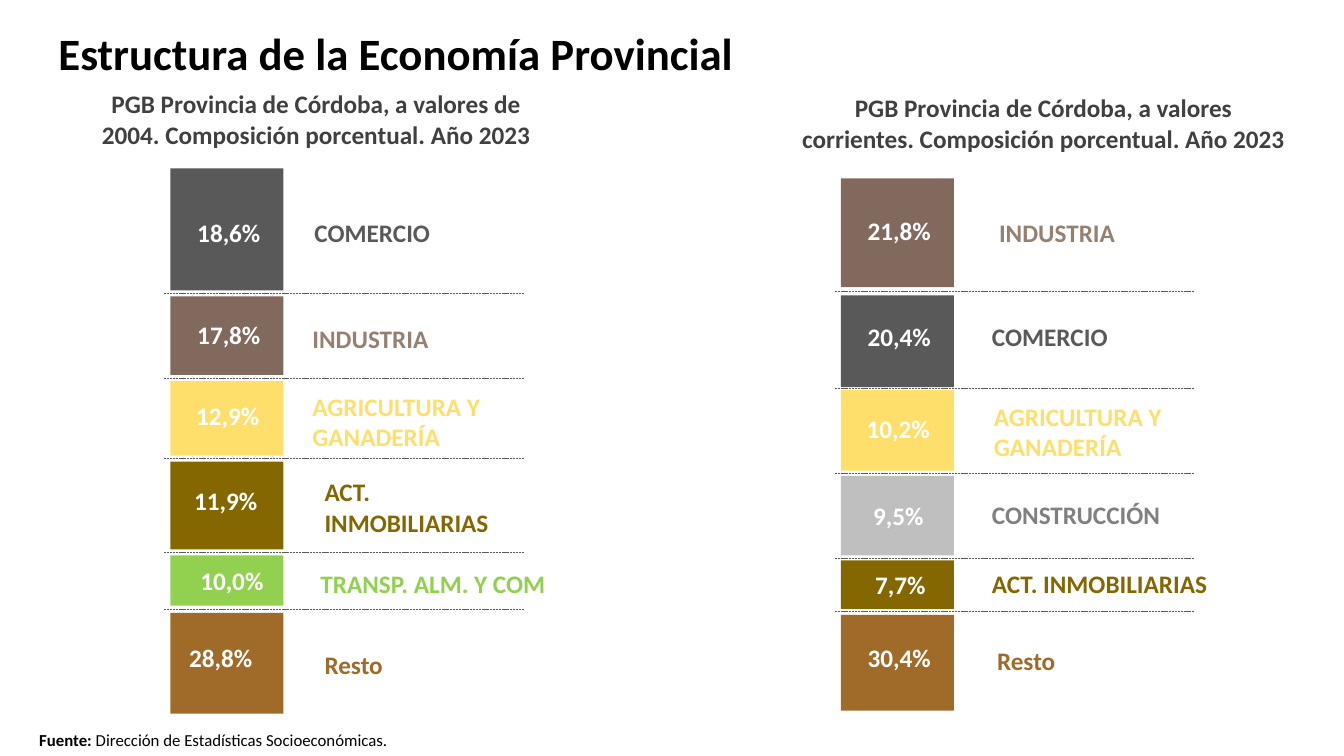
from lxml.etree import SubElement
from pptx import Presentation
from pptx.dml.color import RGBColor
from pptx.enum.dml import MSO_LINE
from pptx.enum.shapes import MSO_CONNECTOR, MSO_SHAPE
from pptx.enum.text import MSO_ANCHOR, MSO_AUTO_SIZE, PP_ALIGN
from pptx.oxml.ns import qn
from pptx.util import Inches, Pt

TITLE = "Estructura de la Economía Provincial"
SOURCE = ("Fuente: ", "Dirección de Estadísticas Socioeconómicas.")

GREY, BROWN, YELLOW, OLIVE = "595959", "82695E", "FFDF6B", "846700"
GREEN, SILVER, OCHRE = "92D050", "BFBFBF", "A06A29"
LABEL_COLORS = {BROWN: "968071", SILVER: "808080"}  # other labels match their bar

# sector: share, label, colour, bar (top, height),
#         share text (centre x, top), label box (left, top, width)
STACKS = [
    {
        "heading": "PGB Provincia de Córdoba, a valores de 2004. "
                   "Composición porcentual. Año 2023",
        "heading_box": (0.76, 0.83, 4.75, 0.71),
        "bar_left": 1.69,
        "sectors": [
            ("18,6%", "COMERCIO", GREY, (1.67, 1.21), (2.27, 2.11), (3.02, 2.11, 2.18)),
            ("17,8%", "INDUSTRIA", BROWN, (2.94, 0.78), (2.27, 3.12), (3, 3.16, 2.18)),
            ("12,9%", "AGRICULTURA Y GANADERÍA", YELLOW, (3.78, 0.74), (2.26, 3.92), (3, 3.83, 2.18)),
            ("11,9%", "ACT. INMOBILIARIAS", OLIVE, (4.58, 0.87), (2.24, 4.77), (3.12, 4.68, 2.18)),
            ("10,0%", "TRANSP. ALM. Y COM", GREEN, (5.51, 0.5), (2.3, 5.56), (3.08, 5.59, 2.82)),
            ("28,8%", "Resto", OCHRE, (6.08, 1), (2.19, 6.32), (3.12, 6.39, 2.18)),
        ],
    },
    {
        "heading": "PGB Provincia de Córdoba, a valores corrientes. "
                   "Composición porcentual. Año 2023",
        "heading_box": (7.85, 0.87, 5, 0.71),
        "bar_left": 8.34,
        "sectors": [
            ("21,8%", "INDUSTRIA", BROWN, (1.77, 1.08), (8.92, 2.09), (9.81, 2.11, 2.18)),
            ("20,4%", "COMERCIO", GREY, (2.93, 0.91), (8.92, 3.14), (9.74, 3.14, 2.18)),
            ("10,2%", "AGRICULTURA Y GANADERÍA", YELLOW, (3.87, 0.8), (8.91, 4.05), (9.76, 3.93, 2.18)),
            ("9,5%", "CONSTRUCCIÓN", SILVER, (4.72, 0.79), (8.91, 4.91), (9.74, 4.9, 2.18)),
            ("7,7%", "ACT. INMOBILIARIAS", OLIVE, (5.56, 0.48), (8.93, 5.6), (9.74, 5.59, 2.78)),
            ("30,4%", "Resto", OCHRE, (6.1, 0.95), (8.92, 6.32), (9.79, 6.35, 2.18)),
        ],
    },
]
BAR_WIDTH = 1.12
SHARE_WIDTH = 1
LINE_HEIGHT = 0.4
RULE_OVERHANG, RULE_LENGTH = 0.06, 3.57


def rgb(hex_color):
    return RGBColor.from_string(hex_color)


def style(run, size, color, bold=True):
    run.font.name = "Calibri"
    run.font.size = Pt(size)
    run.font.bold = bold
    run.font.color.rgb = rgb(color)


def add_text(slide, box, text, color, align=PP_ALIGN.LEFT):
    frame = slide.shapes.add_textbox(*map(Inches, box)).text_frame
    frame.word_wrap = True
    frame.text = text
    paragraph = frame.paragraphs[0]
    paragraph.alignment = align
    style(paragraph.runs[0], 18, color)


def add_bar(slide, box, color):
    bar = slide.shapes.add_shape(MSO_SHAPE.RECTANGLE, *map(Inches, box))
    bar.shadow.inherit = False
    bar.fill.solid()
    bar.fill.fore_color.rgb = rgb(color)
    bar.line.fill.background()


def add_rule(slide, left, y):
    """Draw the dashed horizontal line between two sectors."""
    ends = map(Inches, (left, y, left + RULE_LENGTH, y))
    rule = slide.shapes.add_connector(MSO_CONNECTOR.STRAIGHT, *ends)
    rule.line.color.rgb = rgb(GREY)
    rule.line.width = Pt(0.5)
    rule.line.dash_style = MSO_LINE.SQUARE_DOT
    properties = rule._element.spPr
    properties.find(qn("a:ln")).find(qn("a:prstDash")).set("val", "sysDash")
    SubElement(properties, qn("a:effectLst"))


def add_stack(slide, stack):
    add_text(slide, stack["heading_box"], stack["heading"], "404040", PP_ALIGN.CENTER)
    left, sectors = stack["bar_left"], stack["sectors"]
    previous_bottom = None
    for share, label, color, (top, height), (center, share_top), label_box in sectors:
        add_bar(slide, (left, top, BAR_WIDTH, height), color)
        if previous_bottom is not None:
            add_rule(slide, left - RULE_OVERHANG, (previous_bottom + top) / 2)
        previous_bottom = top + height
        share_box = (center - SHARE_WIDTH / 2, share_top, SHARE_WIDTH, LINE_HEIGHT)
        add_text(slide, share_box, share, "FFFFFF", PP_ALIGN.CENTER)
        add_text(slide, (*label_box, LINE_HEIGHT), label, LABEL_COLORS.get(color, color))


def add_title(slide):
    title = slide.shapes.title
    title.left, title.top, title.width, title.height = map(Inches, (0.48, 0.21, 12.42, 0.64))
    frame = title.text_frame
    frame.text = TITLE
    frame.auto_size = MSO_AUTO_SIZE.NONE
    frame.vertical_anchor = MSO_ANCHOR.TOP
    frame.paragraphs[0].alignment = PP_ALIGN.LEFT
    style(frame.paragraphs[0].runs[0], 32, "000000")


def add_source(slide):
    box = slide.shapes.add_textbox(*map(Inches, (0.29, 7.19, 5.69, 0.3)))
    box.text_frame.word_wrap = True
    for position, part in enumerate(SOURCE):
        run = box.text_frame.paragraphs[0].add_run()
        run.text = part
        style(run, 12, "000000", bold=position == 0)


def main():
    presentation = Presentation()
    presentation.slide_width = Inches(13.33)
    presentation.slide_height = Inches(7.5)
    slide = presentation.slides.add_slide(presentation.slide_layouts[5])
    add_title(slide)
    for stack in STACKS:
        add_stack(slide, stack)
    add_source(slide)
    presentation.save("out.pptx")


if __name__ == "__main__":
    main()
